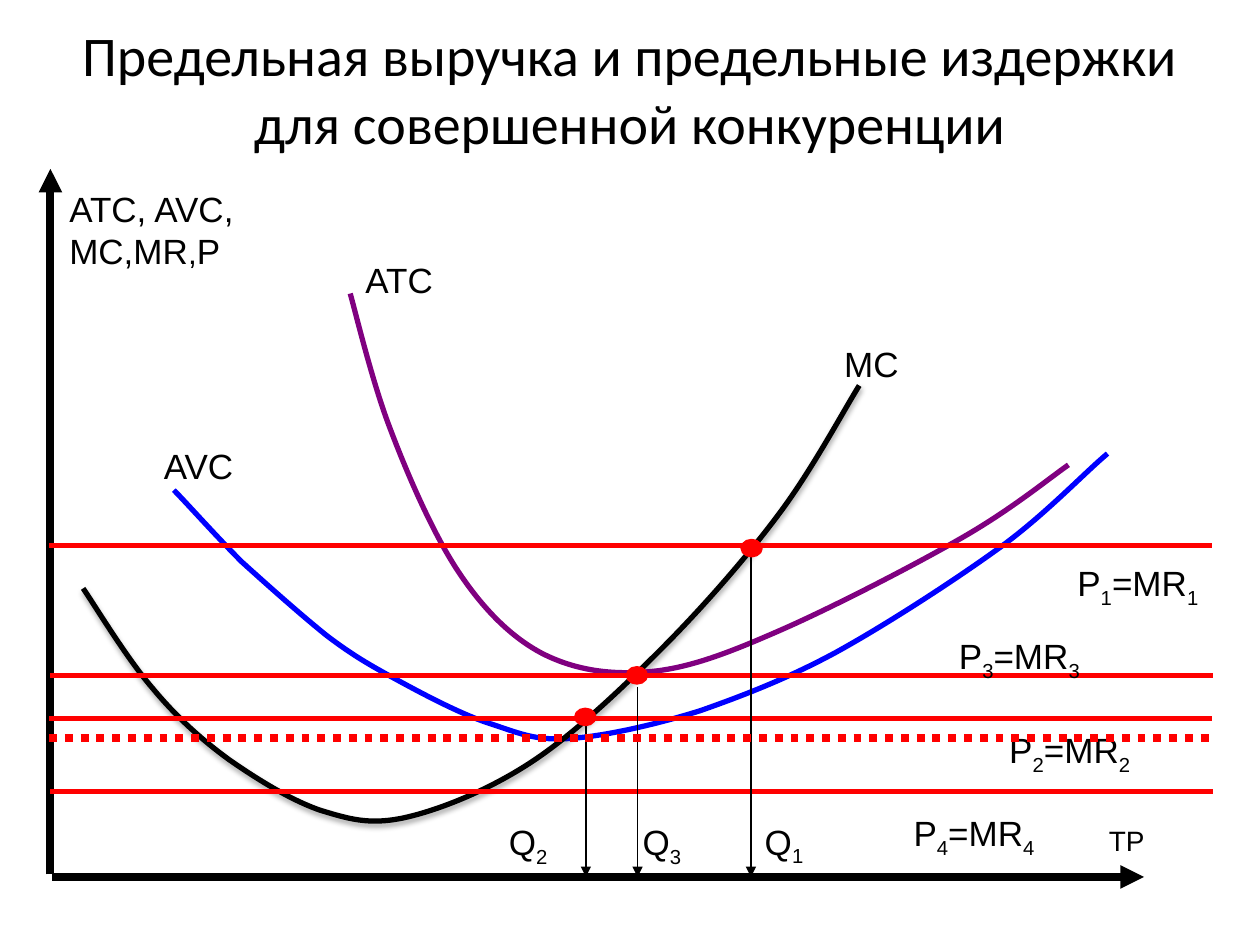
from dataclasses import dataclass
from typing import NamedTuple

from lxml.etree import SubElement
from pptx import Presentation
from pptx.dml.color import RGBColor
from pptx.enum.dml import MSO_LINE
from pptx.enum.shapes import MSO_CONNECTOR, MSO_SHAPE
from pptx.enum.text import MSO_ANCHOR, PP_ALIGN
from pptx.oxml.ns import qn
from pptx.util import Inches, Pt


@dataclass(frozen=True)
class Theme:
    black: RGBColor = RGBColor(0, 0, 0)
    red: RGBColor = RGBColor(255, 0, 0)
    blue: RGBColor = RGBColor(0, 0, 255)
    purple: RGBColor = RGBColor(128, 0, 128)
    title_font: str = "Calibri"
    label_font: str = "Arial"
    title_size: float = 32
    label_size: float = 20
    comma_size: float = 18
    axis_size: float = 16
    thick: float = 4.5
    medium: float = 3
    outline: float = 2
    thin: float = 0.75


class Point(NamedTuple):
    column: float
    row: float


class Box(NamedTuple):
    column: float
    row: float
    columns: float
    rows: float


class Curve(NamedTuple):
    """A start point followed by three points for each Bézier segment."""
    color: RGBColor
    points: list[tuple[float, float]]
    shadow: bool = False


class Price(NamedTuple):
    number: str
    left: float
    row: float
    label: Box


class Output(NamedTuple):
    number: str
    column: float
    top: float
    dot: Point
    label: Box


THEME = Theme()
COLUMNS, ROWS = 10, 7.5
LINE_LENGTH = 9.23
AXIS_ROW = 6.96
DOT_COLUMNS, DOT_ROWS = 0.15, 0.12

CURVES = [
    Curve(THEME.blue, [
        (1.38, 3.89), (1.47, 3.98), (1.72, 4.26), (1.92, 4.46), (2.13, 4.65), (2.4, 4.89),
        (2.6, 5.05), (2.8, 5.2), (2.92, 5.27), (3.14, 5.39), (3.36, 5.51), (3.68, 5.68),
        (3.91, 5.75), (4.15, 5.83), (4.26, 5.88), (4.54, 5.86), (4.81, 5.84), (5.21, 5.75),
        (5.56, 5.64), (5.9, 5.52), (6.24, 5.39), (6.63, 5.18), (7.03, 4.96), (7.57, 4.61),
        (7.93, 4.35), (8.29, 4.09), (8.61, 3.75), (8.79, 3.6)]),
    Curve(THEME.black, [
        (0.66, 4.67), (0.75, 4.8), (1.01, 5.23), (1.21, 5.46), (1.4, 5.69), (1.6, 5.87),
        (1.82, 6.03), (2.05, 6.19), (2.31, 6.35), (2.54, 6.43), (2.77, 6.5), (2.93, 6.55),
        (3.21, 6.49), (3.48, 6.43), (3.86, 6.28), (4.2, 6.06), (4.54, 5.84), (4.91, 5.49),
        (5.24, 5.16), (5.57, 4.83), (5.93, 4.42), (6.19, 4.07), (6.45, 3.72), (6.69, 3.27),
        (6.82, 3.06)], shadow=True),
    Curve(THEME.purple, [
        (2.78, 2.33), (2.83, 2.51), (2.96, 3.05), (3.1, 3.41), (3.24, 3.78), (3.44, 4.24),
        (3.64, 4.54), (3.84, 4.84), (4.06, 5.06), (4.31, 5.19), (4.57, 5.32), (4.85, 5.36),
        (5.17, 5.33), (5.48, 5.3), (5.79, 5.18), (6.2, 5), (6.61, 4.82), (7.27, 4.48),
        (7.65, 4.26), (8.03, 4.04), (8.31, 3.81), (8.48, 3.69)]),
]
CURVE_LABELS = {
    "MC": Box(6.64, 2.69, 0.65, 0.29),
    "AVC": Box(1.24, 3.5, 1.1, 0.25),
    "ATC": Box(2.84, 2.02, 0.98, 0.32),
}
PRICES = [
    Price("1", 0.39, 4.33, Box(8.49, 4.43, 1.51, 0.26)),
    Price("2", 0.39, 5.7, Box(7.95, 5.75, 1.5, 0.34)),
    Price("3", 0.4, 5.36, Box(7.55, 5.01, 1.51, 0.3)),
    Price("4", 0.4, 6.28, Box(7.19, 6.41, 1.48, 0.18)),
]
OUTPUTS = [
    Output("1", 5.96, 4.39, Point(5.89, 4.29), Box(6.01, 6.48, 0.63, 0.44)),
    Output("2", 4.65, 5.72, Point(4.57, 5.63), Box(3.98, 6.48, 0.74, 0.41)),
    Output("3", 5.06, 5.45, Point(4.98, 5.3), Box(5.04, 6.48, 0.66, 0.41)),
]

presentation = Presentation()
presentation.slide_width, presentation.slide_height = Inches(10), Inches(7.5)
slide = presentation.slides.add_slide(presentation.slide_layouts[6])


def place(*lengths: float) -> list[int]:
    """Turn alternating columns and rows of the grid into slide lengths."""
    units = (presentation.slide_width / COLUMNS, presentation.slide_height / ROWS)
    return [round(length * units[index % 2]) for index, length in enumerate(lengths)]


def add_text(box: Box, *parts: str, size: float = THEME.label_size,
             font: str = THEME.label_font, inset: tuple[float, float] = (0.06, 0.03)):
    """Add one paragraph; parts that are only digits become subscripts."""
    frame = slide.shapes.add_textbox(*place(*box)).text_frame
    frame.word_wrap = True
    frame.margin_left = frame.margin_right = Inches(inset[0])
    frame.margin_top = frame.margin_bottom = Inches(inset[1])
    paragraph = frame.paragraphs[0]
    paragraph.font.name, paragraph.font.size = font, Pt(size)
    paragraph.font.color.rgb = THEME.black
    for part in parts:
        run = paragraph.add_run()
        run.text = part
        if part.isdigit():
            run._r.get_or_add_rPr().set("baseline", "-25000")
    return frame


def add_line(start: Point, end: Point, color: RGBColor, width: float,
             arrow: bool = False, dotted: bool = False) -> None:
    connector = slide.shapes.add_connector(MSO_CONNECTOR.STRAIGHT, *place(*start, *end))
    connector.line.color.rgb, connector.line.width = color, Pt(width)
    if dotted:
        connector.line.dash_style = MSO_LINE.ROUND_DOT
    if arrow:
        SubElement(connector.line._get_or_add_ln(), qn("a:tailEnd"), type="triangle")
    SubElement(connector._element.spPr, qn("a:effectLst"))


def add_curve(curve: Curve) -> None:
    """Build an open outline, then merge each three line steps into one Bézier."""
    start, *others = [place(*point) for point in curve.points]
    builder = slide.shapes.build_freeform(*start)
    builder.add_line_segments(others, close=False)
    shape = builder.convert_to_shape()
    shape.fill.background()
    shape.line.color.rgb, shape.line.width = curve.color, Pt(THEME.medium)
    shape.shadow.inherit = False
    steps = list(shape._element.iter(qn("a:lnTo")))
    outline = steps[0].getparent()
    for index in range(0, len(steps), 3):
        bezier = SubElement(outline, qn("a:cubicBezTo"))
        for step in steps[index:index + 3]:
            bezier.append(step[0])
            outline.remove(step)
    if curve.shadow:
        effects = shape._element.spPr.find(qn("a:effectLst"))
        shadow = SubElement(effects, qn("a:outerShdw"), blurRad=str(Pt(3.1)),
                            dist=str(Pt(1.8)), dir="5400000", rotWithShape="0")
        color = SubElement(shadow, qn("a:srgbClr"), val=str(THEME.black))
        SubElement(color, qn("a:alpha"), val="35000")


def add_dot(position: Point) -> None:
    dot = slide.shapes.add_shape(MSO_SHAPE.OVAL, *place(*position, DOT_COLUMNS, DOT_ROWS))
    dot.shadow.inherit = False
    dot.fill.solid()
    dot.fill.fore_color.rgb = dot.line.color.rgb = THEME.red
    dot.line.width = Pt(THEME.outline)


def add_price_line(left: float, row: float, width: float, dotted: bool = False) -> None:
    add_line(Point(left, row), Point(left + LINE_LENGTH, row), THEME.red, width, dotted=dotted)


title = add_text(Box(0.5, 0.3, 9, 0.8),
                 "Предельная выручка и предельные издержки для совершенной конкуренции",
                 size=THEME.title_size, font=THEME.title_font, inset=(0.1, 0.05))
title.vertical_anchor = MSO_ANCHOR.MIDDLE
title.paragraphs[0].alignment = PP_ALIGN.CENTER

add_line(Point(0.4, 6.94), Point(0.4, 1.34), THEME.black, THEME.thick, arrow=True)
add_line(Point(0.41, AXIS_ROW), Point(9.08, AXIS_ROW), THEME.black, THEME.thick, arrow=True)
axis_label = add_text(Box(0.49, 1.46, 1.57, 0.95), "ATC, AVC, MC,MR", ",", "P")
axis_label.paragraphs[0].runs[1].font.size = Pt(THEME.comma_size)
add_text(Box(8.74, 6.51, 0.54, 0.29), "TP", size=THEME.axis_size)

for curve in CURVES:
    add_curve(curve)
for name, box in CURVE_LABELS.items():
    add_text(box, name)
for price in PRICES:
    add_price_line(price.left, price.row, THEME.medium)
    add_text(price.label, "P", price.number, "=MR", price.number)
for output in OUTPUTS:
    add_line(Point(output.column, output.top), Point(output.column, AXIS_ROW),
             THEME.black, THEME.thin, arrow=True)
    add_dot(output.dot)
    add_text(output.label, "Q", output.number)
add_price_line(0.39, 5.86, THEME.thick, dotted=True)

presentation.save("out.pptx")
